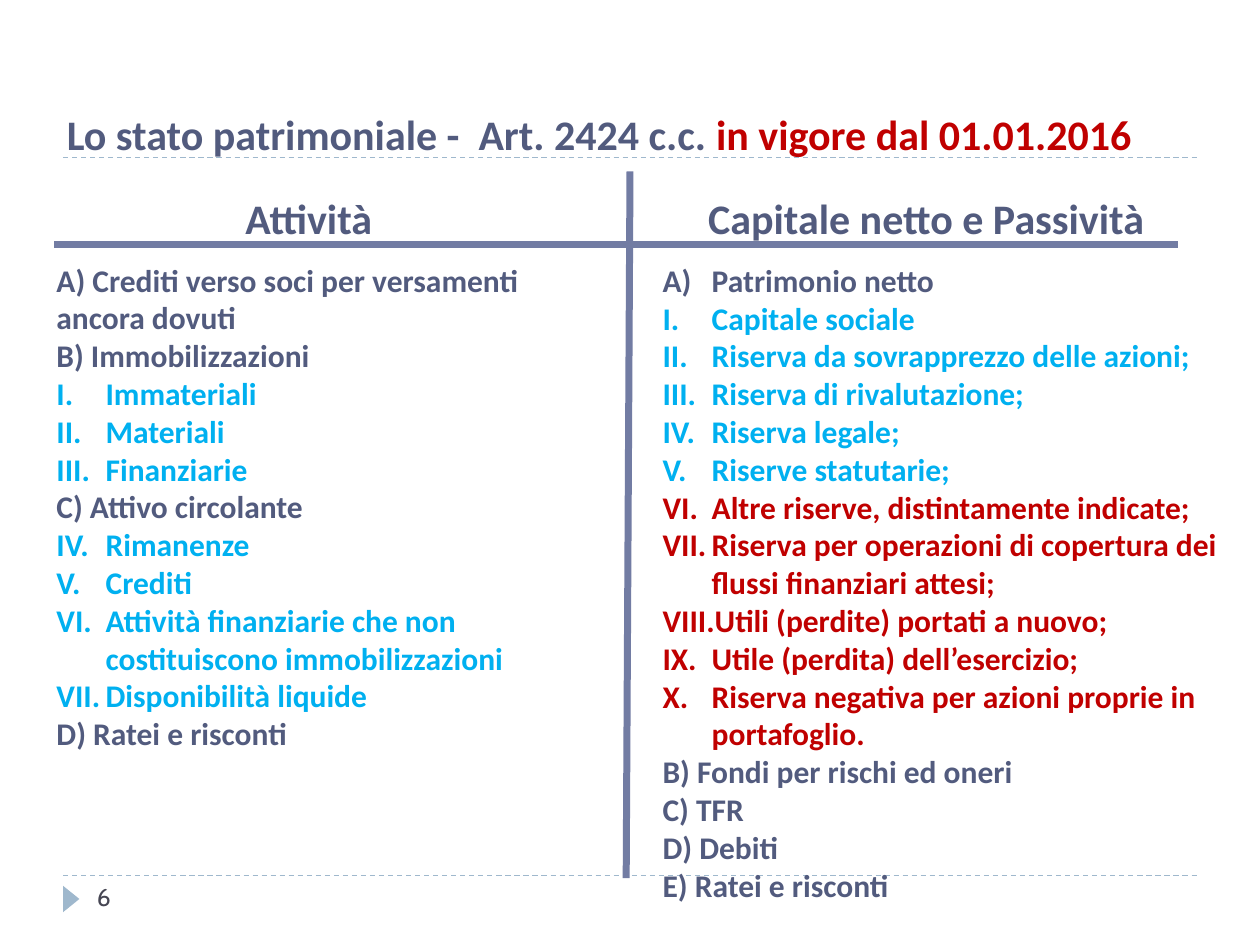
from lxml import etree
from pptx import Presentation
from pptx.dml.color import RGBColor
from pptx.enum.dml import MSO_LINE
from pptx.enum.shapes import MSO_CONNECTOR, MSO_SHAPE
from pptx.enum.text import MSO_ANCHOR, MSO_AUTO_SIZE, PP_ALIGN
from pptx.oxml.ns import qn
from pptx.util import Inches, Pt

STRAIGHT = MSO_CONNECTOR.STRAIGHT
TRIANGLE = MSO_SHAPE.ISOSCELES_TRIANGLE
DASH = MSO_LINE.DASH
LEFT, RIGHT = PP_ALIGN.LEFT, PP_ALIGN.RIGHT
TOP = MSO_ANCHOR.TOP
NO_FIT = MSO_AUTO_SIZE.NONE

SLATE = RGBColor(0x52, 0x5B, 0x7E)
RULE = RGBColor(0x72, 0x7C, 0xA3)
PALE = RGBColor(0x9F, 0xB8, 0xCD)
CYAN = RGBColor(0x00, 0xB0, 0xF0)
RED = RGBColor(0xC0, 0x00, 0x00)
GREY = RGBColor(0x46, 0x46, 0x53)

ROMAN, LETTER = "romanUcPeriod", "alphaUcParenR"

# Each group: colour, numbering scheme, first number, entries
ASSETS = [
    (SLATE, None, 1, ["A) Crediti verso soci per versamenti ancora dovuti",
                      "B) Immobilizzazioni"]),
    (CYAN, ROMAN, 1, ["Immateriali", "Materiali", "Finanziarie"]),
    (SLATE, None, 1, ["C) Attivo circolante"]),
    (CYAN, ROMAN, 4, ["Rimanenze", "Crediti",
                      "Attività finanziarie che non costituiscono immobilizzazioni",
                      "Disponibilità liquide"]),
    (SLATE, None, 1, ["D) Ratei e risconti"]),
]
LIABILITIES = [
    (SLATE, LETTER, 1, ["Patrimonio netto"]),
    (CYAN, ROMAN, 1, ["Capitale sociale", "Riserva da sovrapprezzo delle azioni;",
                      "Riserva di rivalutazione;", "Riserva legale;",
                      "Riserve statutarie;"]),
    (RED, ROMAN, 1, ["Altre riserve, distintamente indicate;",
                     "Riserva per operazioni di copertura dei flussi finanziari attesi;",
                     "Utili (perdite) portati a nuovo;",
                     "Utile (perdita) dell’esercizio;",
                     "Riserva negativa per azioni proprie in portafoglio."]),
    (SLATE, None, 1, ["B) Fondi per rischi ed oneri", "C) TFR", "D) Debiti",
                      "E) Ratei e risconti"]),
]


class BalanceSheet:
    """Style and current slide; lengths are cells of a 100 by 75 grid."""

    font = "Calibri"
    heading_size, body_size, number_size = 24, 18, 14
    hanging = 3.9

    def __init__(self, prs):
        self.cell = prs.slide_width / 100
        self.s = prs.slides.add_slide(prs.slide_layouts[5])

    def grid(self, *cells):
        return [round(c * self.cell) for c in cells]

    def run(self, p, text, size, color, font=font, bold=True):
        r = p.add_run()
        r.text = text
        r.font.name, r.font.size, r.font.bold = font, Pt(size), bold
        r.font.color.rgb = color

    def frame(self, sp, wrap=True):
        tf = sp.text_frame
        tf.auto_size, tf.word_wrap, tf.vertical_anchor = NO_FIT, wrap, TOP
        return tf

    def text_box(self, *at, wrap=True):
        return self.frame(self.s.shapes.add_textbox(*self.grid(*at)), wrap)

    def title(self, at, runs):
        sp = self.s.shapes.title
        sp.left, sp.top, sp.width, sp.height = self.grid(*at)
        p = self.frame(sp).paragraphs[0]
        p.alignment = LEFT
        for text, color in runs:
            self.run(p, text, self.heading_size, color)

    def heading(self, at, text, align=LEFT):
        p = self.text_box(*at, wrap=False).paragraphs[0]
        p.alignment = align
        self.run(p, text, self.heading_size, SLATE)

    def number(self, p, scheme, start):
        """Give the paragraph automatic numbering with a hanging indent."""
        indent = self.grid(self.hanging)[0]
        pPr = p._p.get_or_add_pPr()
        pPr.set("marL", str(indent))
        pPr.set("indent", str(-indent))
        etree.SubElement(pPr, qn("a:buFont"), typeface=self.font)
        bullet = etree.SubElement(pPr, qn("a:buAutoNum"), type=scheme)
        if start > 1:
            bullet.set("startAt", str(start))

    def entries(self, at, groups):
        tf = self.text_box(*at)
        rows = [(text, color, scheme, start)
                for color, scheme, start, texts in groups for text in texts]
        for i, (text, color, scheme, start) in enumerate(rows):
            p = tf.add_paragraph() if i else tf.paragraphs[0]
            if scheme:
                self.number(p, scheme, start)
            self.run(p, text, self.body_size, color)

    def line(self, x1, y1, x2, y2, color, width, dash=None):
        c = self.s.shapes.add_connector(STRAIGHT, *self.grid(x1, y1, x2, y2))
        c.line.color.rgb, c.line.width = color, Pt(width)
        if dash:
            c.line.dash_style = dash
        etree.SubElement(c._element.spPr, qn("a:effectLst"))

    def marker(self, *at):
        sp = self.s.shapes.add_shape(TRIANGLE, *self.grid(*at))
        sp.rotation = 90
        sp.shadow.inherit = False
        sp.fill.solid()
        sp.fill.fore_color.rgb = PALE
        sp.line.fill.background()

    def page_number(self, at, text):
        p = self.text_box(*at).paragraphs[0]
        self.run(p, text, self.number_size, GREY, font="Cabin", bold=False)


def main():
    prs = Presentation()
    prs.slide_width, prs.slide_height = Inches(10), Inches(7.5)
    sheet = BalanceSheet(prs)

    for row in (69.5, 12.5):
        sheet.line(5, row, 95, row, PALE, 0.75, DASH)
    sheet.marker(4.6, 70.7, 2.1, 1.3)

    sheet.title((4.3, 8.1, 89.1, 11.1),
                [("Lo stato patrimoniale -  Art. 2424 c.c. ", SLATE),
                 ("in vigore dal 01.01.2016", RED)])
    sheet.heading((18.5, 14.8, 12.3, 5), "Attività")
    sheet.heading((54.7, 14.8, 37.1, 5), "Capitale netto e Passività", RIGHT)
    sheet.entries((3.5, 20.2, 45.4, 40.4), ASSETS)
    sheet.entries((51.6, 20.2, 46.9, 52.5), LIABILITIES)

    sheet.line(4.3, 19.4, 93.5, 19.4, RULE, 4)
    sheet.line(49.7, 69.7, 50, 13.6, RULE, 4)
    sheet.page_number((6.7, 69.5, 21.7, 4), "6")
    prs.save("out.pptx")


if __name__ == "__main__":
    main()
